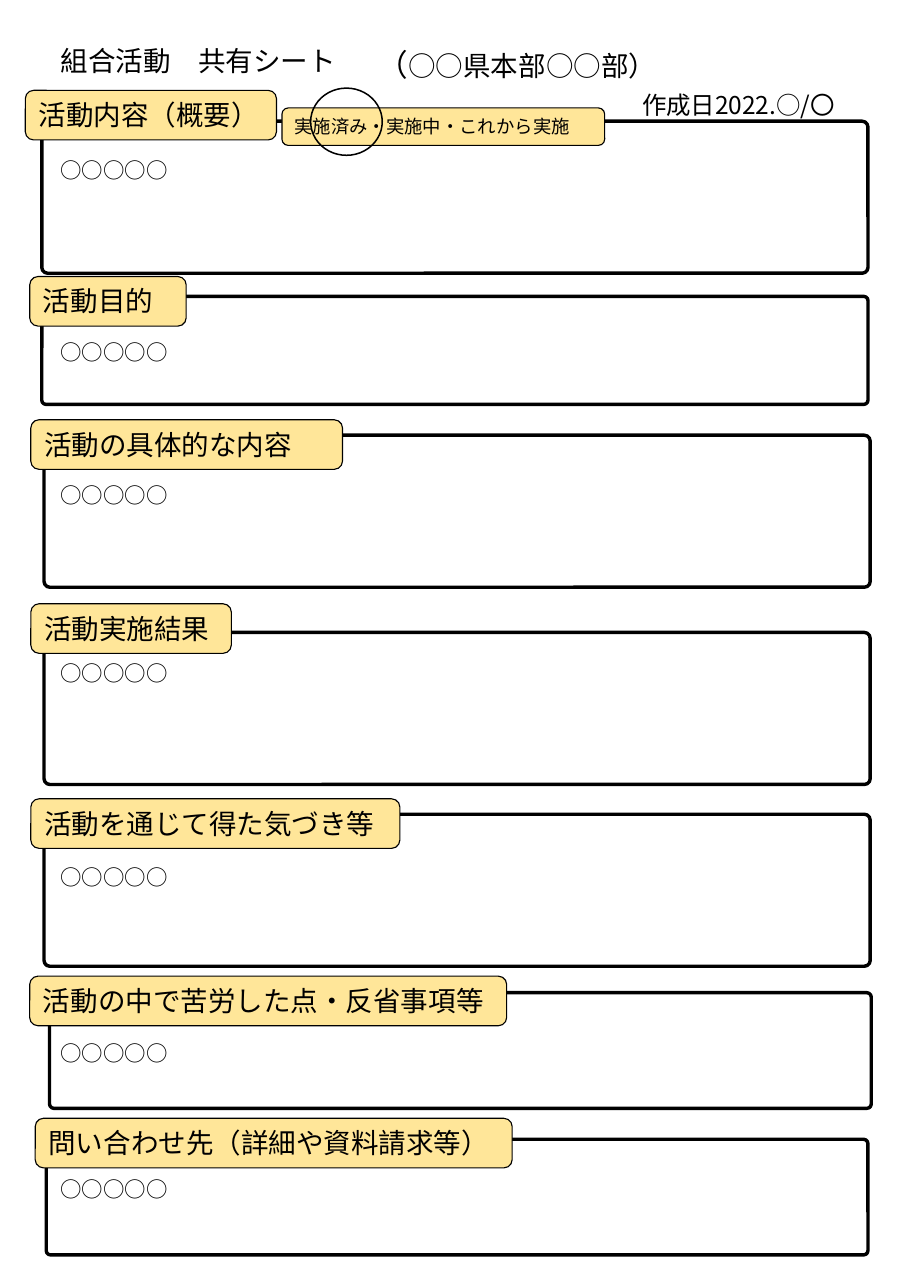
from pptx import Presentation
from pptx.dml import color
from pptx.enum import shapes, text
from pptx.oxml import xmlchemy
from pptx.util import Inches, Pt

FONT = "Noto Sans CJK JP"
BLACK = "000000"
YELLOW = "FFE699"


def write(holder, words, size):
    frame = holder.text_frame
    frame.word_wrap = True
    frame.vertical_anchor = text.MSO_ANCHOR.TOP
    frame.text = words
    line = frame.paragraphs[0]
    line.alignment = text.PP_ALIGN.LEFT
    for run in line.runs:
        run.font.name = FONT
        run.font.size = Pt(size)
        run.font.color.rgb = color.RGBColor.from_string(BLACK)
        east_asian = xmlchemy.OxmlElement("a:ea")
        east_asian.set("typeface", FONT)
        run.font._element.append(east_asian)


def outline(kind, place, width, fill=None):
    form = slide.shapes.add_shape(kind, *map(Inches, place))
    form.shadow.inherit = False
    form.line.color.rgb = color.RGBColor.from_string(BLACK)
    form.line.width = Pt(width)
    if fill:
        form.fill.solid()
        form.fill.fore_color.rgb = color.RGBColor.from_string(fill)
    else:
        form.fill.background()
    return form


deck = Presentation()
deck.slide_width = Inches(8.27)
deck.slide_height = Inches(11.69)
slide = deck.slides.add_slide(deck.slide_layouts[5])
rounded = shapes.MSO_SHAPE.ROUNDED_RECTANGLE

heading = slide.shapes.title
heading.left, heading.top = Inches(0.45), Inches(0.35)
heading.width, heading.height = Inches(2.89), Inches(0.4)
write(heading, "組合活動　共有シート", 18)

branch = slide.shapes.add_textbox(Inches(3.33), Inches(0.37), Inches(2.89), Inches(0.44))
write(branch, "（", 20)
branch_name = branch.text_frame.paragraphs[0].add_run()
branch_name.text = "○○県本部○○部）"
branch_name.font.name = FONT
branch_name.font.size = Pt(18)
branch_name.font.color.rgb = color.RGBColor.from_string(BLACK)

sections = [
    ("活動内容（概要）", (0.38, 1.1, 7.5, 1.38), (0.23, 0.82, 2.28), 1.38),
    ("活動目的", (0.38, 2.69, 7.5, 0.98), (0.27, 2.51, 1.42), 3.03),
    ("活動の具体的な内容", (0.4, 3.95, 7.5, 1.38), (0.28, 3.81, 2.83), 4.33),
    ("活動実施結果", (0.4, 5.74, 7.5, 1.38), (0.28, 5.48, 1.82), 5.94),
    ("活動を通じて得た気づき等", (0.4, 7.39, 7.5, 1.38), (0.28, 7.25, 3.35), 7.79),
    ("活動の中で苦労した点・反省事項等", (0.45, 9.01, 7.46, 1.05), (0.27, 8.86, 4.33), 9.39),
    ("問い合わせ先（詳細や資料請求等）", (0.42, 10.34, 7.46, 1.05), (0.32, 10.15, 4.33), 10.63),
]
for caption, frame_place, label_place, entry_top in sections:
    frame = outline(rounded, frame_place, 2.25)
    frame.adjustments[0] = 0.038
    label = outline(rounded, (*label_place, 0.45), 0.75, YELLOW)
    write(label, caption, 18)
    entry = slide.shapes.add_textbox(Inches(0.45), Inches(entry_top), Inches(7.21), Inches(1.04))
    write(entry, "○○○○○", 14)

created = slide.shapes.add_textbox(Inches(5.73), Inches(0.77), Inches(2.31), Inches(0.37))
write(created, "作成日2022.○/〇", 16)

status = outline(rounded, (2.56, 0.98, 2.93, 0.34), 0.75, YELLOW)
write(status, "実施済み・実施中・これから実施", 12)
outline(shapes.MSO_SHAPE.OVAL, (2.82, 0.8, 0.65, 0.61), 1)

deck.save("out.pptx")
